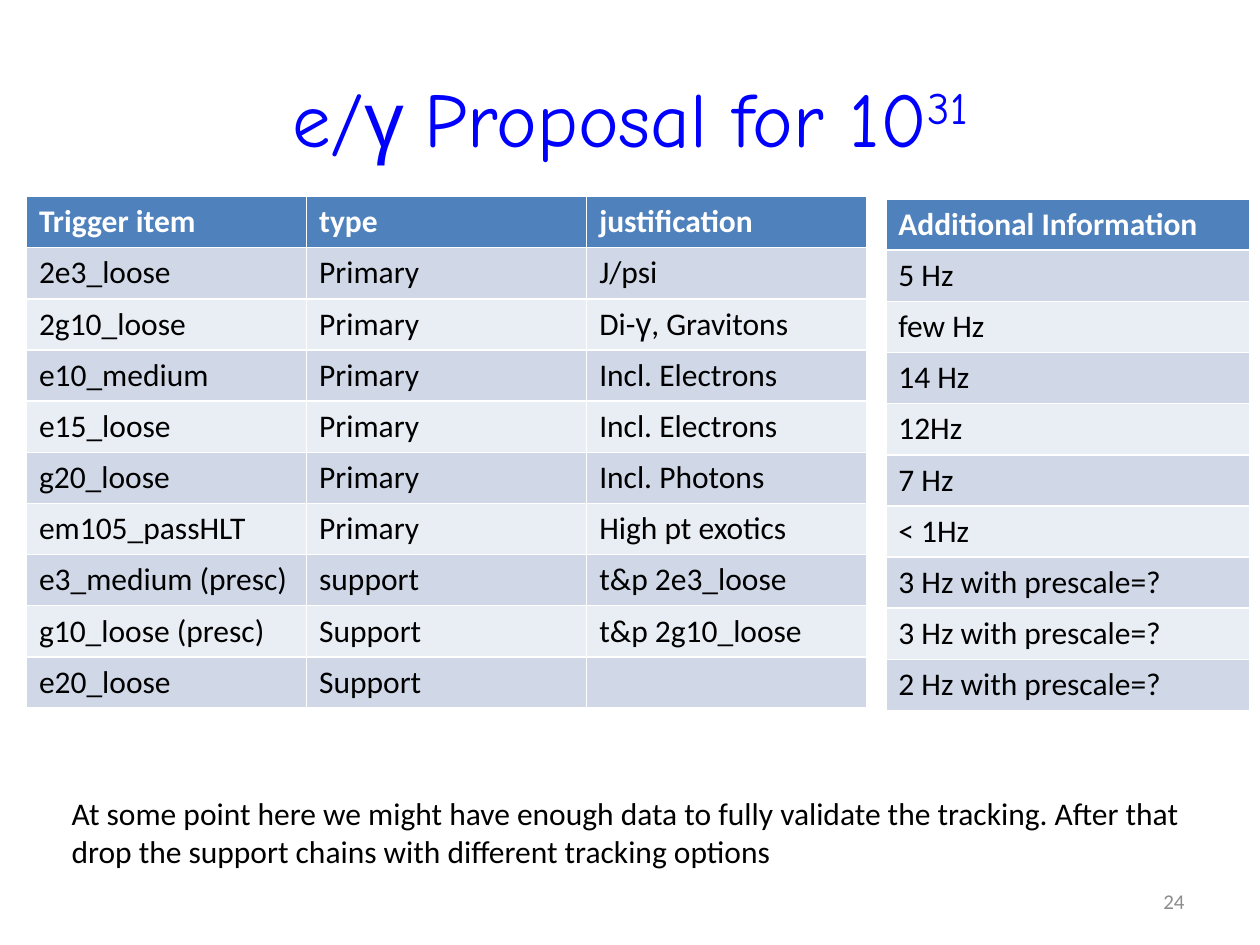
import pptx
import pptx.dml.color
import pptx.enum.text
import pptx.util

Inches = pptx.util.Inches
ALIGN = pptx.enum.text.PP_ALIGN
ANCHOR = pptx.enum.text.MSO_ANCHOR


def rgb(value):
    return pptx.dml.color.RGBColor.from_string(value)


class SlideBuilder:
    """Hold the style and the current slide, and add styled elements to it."""

    font = "Calibri"
    black, white, blue, grey = "000000", "FFFFFF", "0000FF", "8C8C8C"
    header, bands = "4F81BD", ("D0D8E8", "E9EDF4")

    def __init__(self, prs):
        self.slide = prs.slides.add_slide(prs.slide_layouts[6])

    def run(self, p, text, size=18, color=black, font=font, bold=False, baseline=None):
        r = p.add_run()
        r.text = text
        r.font.size = pptx.util.Pt(size)
        r.font.name = font
        r.font.bold = bold
        r.font.color.rgb = rgb(color)
        if baseline:
            r.font._element.set("baseline", str(baseline * 1000))

    def text(self, box, paragraphs, align=ALIGN.LEFT, anchor=ANCHOR.TOP, wrap=True, **style):
        tf = self.slide.shapes.add_textbox(*map(Inches, box)).text_frame
        tf.word_wrap = wrap
        tf.vertical_anchor = anchor
        for i, runs in enumerate(paragraphs):
            p = tf.paragraphs[0] if i == 0 else tf.add_paragraph()
            p.alignment = align
            for text, extra in runs:
                self.run(p, text, **{**style, **extra})

    def table(self, left, top, col_width, row_height, rows):
        n_rows, n_cols = len(rows), len(rows[0])
        size = (col_width * n_cols, row_height * n_rows)
        table = self.slide.shapes.add_table(
            n_rows, n_cols, *map(Inches, (left, top, *size))).table
        for i, row in enumerate(rows):
            is_header = i == 0
            for j, value in enumerate(row):
                cell = table.cell(i, j)
                cell.fill.solid()
                cell.fill.fore_color.rgb = rgb(
                    self.header if is_header else self.bands[(i - 1) % 2])
                runs = [(value, {})] if isinstance(value, str) else value
                for text, extra in runs:
                    if text:
                        self.run(cell.text_frame.paragraphs[0], text, bold=is_header,
                                 color=self.white if is_header else self.black, **extra)


TRIGGERS = [
    ("Trigger item", "type", "justification"),
    ("2e3_loose", "Primary", "J/psi"),
    ("2g10_loose", "Primary", [("Di-", {}), ("γ", {"font": "Arial"}), (", Gravitons", {})]),
    ("e10_medium", "Primary", "Incl. Electrons"),
    ("e15_loose", "Primary", "Incl. Electrons"),
    ("g20_loose", "Primary", "Incl. Photons"),
    ("em105_passHLT", "Primary", "High pt exotics"),
    ("e3_medium (presc)", "support", "t&p 2e3_loose"),
    ("g10_loose (presc)", "Support", "t&p 2g10_loose"),
    ("e20_loose", "Support", ""),
]
RATES = ["Additional Information", "5 Hz", "few Hz", "14 Hz", "12Hz", "7 Hz", "< 1Hz",
         "3 Hz with prescale=?", "3 Hz with prescale=?", "2 Hz with prescale=?"]
NOTE = [
    "At some point here we might have enough data to fully validate the tracking. After that",
    "drop the support chains with different tracking options",
]


def main():
    prs = pptx.Presentation()
    prs.slide_width, prs.slide_height = Inches(10), Inches(7.5)
    s = SlideBuilder(prs)
    title = [("e/", {}), ("γ ", {"font": "Noto Sans"}), ("Proposal for 10", {}),
             ("31", {"baseline": 30})]
    s.text((0.5, 0.3, 9, 1.25), [title], ALIGN.CENTER, ANCHOR.MIDDLE,
           size=44, color=s.blue, font="Comic Neue")
    s.text((7.17, 6.95, 2.33, 0.4), [[("24", {})]], ALIGN.RIGHT, ANCHOR.MIDDLE,
           size=12, color=s.grey)
    row_height = 4.06 / len(TRIGGERS)
    s.table(0.21, 1.56, 6.67 / 3, row_height, TRIGGERS)
    s.table(7.03, 1.58, 2.89, row_height, [(rate,) for rate in RATES])
    s.text((0.47, 6.25, 9.16, 0.71), [[(line, {})] for line in NOTE], wrap=False)
    prs.save("out.pptx")


if __name__ == "__main__":
    main()
